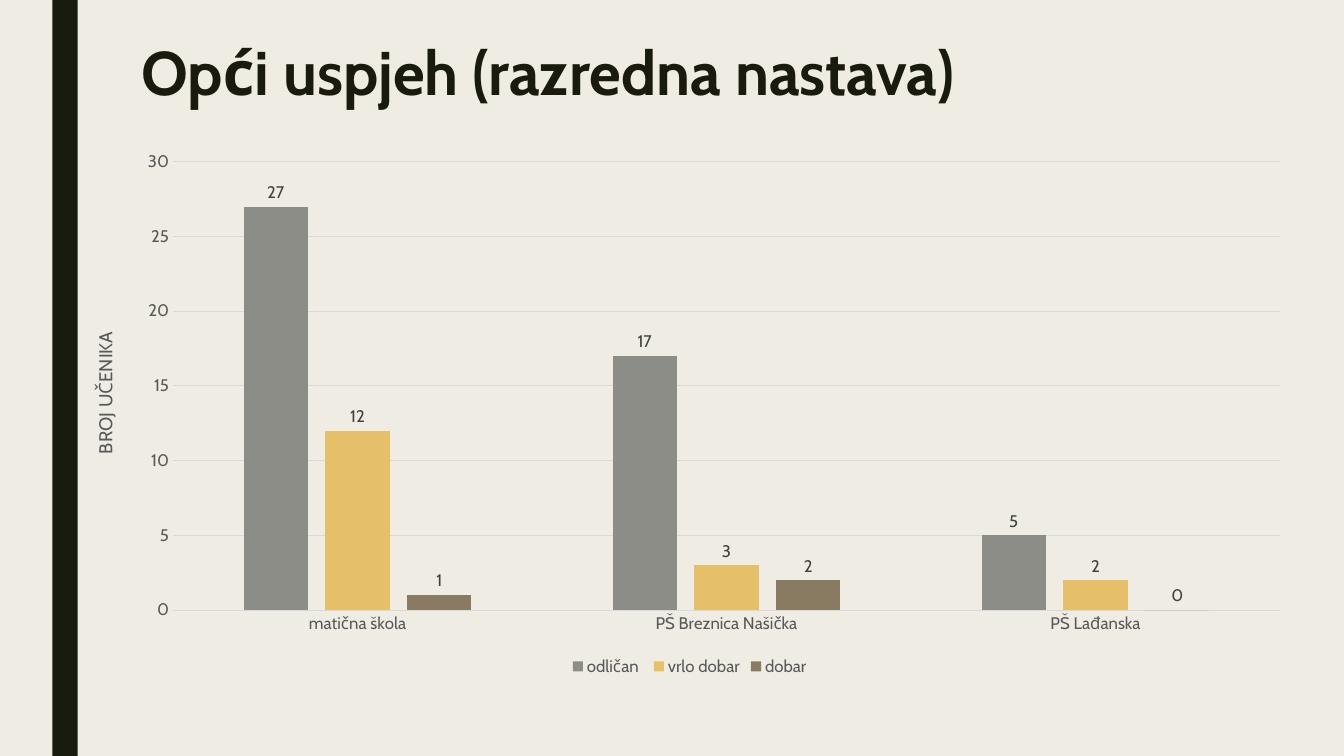
from lxml.etree import SubElement
from pptx import Presentation
from pptx.chart.data import CategoryChartData
from pptx.dml.color import RGBColor
from pptx.enum.chart import XL_CHART_TYPE, XL_LABEL_POSITION, XL_LEGEND_POSITION, XL_TICK_MARK
from pptx.enum.shapes import MSO_SHAPE
from pptx.enum.text import MSO_ANCHOR, MSO_AUTO_SIZE, PP_ALIGN
from pptx.oxml.ns import qn
from pptx.util import Inches, Pt


def paint(target, color):
    target.solid()
    target.fore_color.rgb = RGBColor.from_string(color)


class Deck:
    face = "Cabin"
    dark = "191B0E"
    paper = "EFEDE3"
    gray = "595959"
    rule = "D9D9D9"

    def __init__(self):
        self.show = Presentation()
        self.show.slide_width = Inches(13.33)
        self.show.slide_height = Inches(7.5)
        self.slide = self.show.slides.add_slide(self.show.slide_layouts[5])
        paint(self.slide.background.fill, self.paper)

    def style(self, font, size, color, bold=False):
        font.name = self.face
        font.size = Pt(size)
        font.bold = bold
        paint(font.fill, color)

    def line(self, format):
        paint(format.line.fill, self.rule)
        format.line.width = Pt(0.75)

    def bar(self, *box):
        shape = self.slide.shapes.add_shape(MSO_SHAPE.RECTANGLE, *map(Inches, box))
        shape.shadow.inherit = False
        paint(shape.fill, self.dark)
        shape.line.fill.background()

    def title(self, text, *box):
        shape = self.slide.shapes.title
        shape.left, shape.top, shape.width, shape.height = map(Inches, box)
        frame = shape.text_frame
        frame.text = text
        frame.word_wrap = True
        frame.auto_size = MSO_AUTO_SIZE.NONE
        frame.vertical_anchor = MSO_ANCHOR.TOP
        para = frame.paragraphs[0]
        para.alignment = PP_ALIGN.LEFT
        para.line_spacing = 0.89
        self.style(para.runs[0].font, 44, self.dark, True)

    def chart(self, groups, series, label, plot, *box):
        data = CategoryChartData()
        data.categories = groups
        for name, color, values in series:
            data.add_series(name, values)
        chart = self.slide.shapes.add_chart(
            XL_CHART_TYPE.COLUMN_CLUSTERED, *map(Inches, box), data).chart
        self.style(chart.font, 10, "000000")
        chart.has_title = False
        chart.has_legend = True
        chart.legend.position = XL_LEGEND_POSITION.BOTTOM
        chart.legend.include_in_layout = False
        self.style(chart.legend.font, 12, self.gray)
        self.axes(chart, label)
        bars = chart.plots[0]
        bars.vary_by_categories = False
        bars.gap_width = 219
        bars.overlap = -27
        for item, (name, color, values) in zip(bars.series, series):
            paint(item.format.fill, color)
            item.invert_if_negative = False
            labels = item.data_labels
            labels.show_value = True
            labels.position = XL_LABEL_POSITION.OUTSIDE_END
            self.style(labels.font, 12, "404040")
        self.place(chart, plot)

    def axes(self, chart, label):
        for axis in (chart.category_axis, chart.value_axis):
            axis.major_tick_mark = XL_TICK_MARK.NONE
            axis.minor_tick_mark = XL_TICK_MARK.NONE
            self.style(axis.tick_labels.font, 12, self.gray)
        self.line(chart.category_axis.format)
        axis = chart.value_axis
        axis.format.line.fill.background()
        axis.minimum_scale, axis.maximum_scale, axis.major_unit = 0, 30, 5
        axis.has_major_gridlines = True
        self.line(axis.major_gridlines.format)
        frame = axis.axis_title.text_frame
        frame.text = label
        self.style(frame.paragraphs[0].runs[0].font, 13.3, self.gray)
        body = frame._txBody.find(qn("a:bodyPr"))
        body.set("rot", "-5400000")
        body.set("vert", "horz")

    def place(self, chart, plot):
        area = chart._chartSpace.find(".//" + qn("c:plotArea"))
        for old in area.findall(qn("c:layout")):
            area.remove(old)
        layout = SubElement(area, qn("c:layout"))
        area.insert(0, layout)
        manual = SubElement(layout, qn("c:manualLayout"))
        marks = [("layoutTarget", "inner"), ("xMode", "edge"), ("yMode", "edge")]
        for tag, value in marks + list(zip("xywh", plot)):
            SubElement(manual, qn("c:" + tag)).set("val", str(value))


def main():
    deck = Deck()
    deck.bar(0.52, 0, 0.25, 7.5)
    deck.title("Opći uspjeh (razredna nastava)", 1.3, 0.38, 10.5, 1.62)
    groups = ["matična škola", "PŠ Breznica Našička", "PŠ Lađanska"]
    series = [
        ("odličan ", "8C8D86", (27, 17, 5)),
        ("vrlo dobar", "E6C069", (12, 3, 2)),
        ("dobar", "897B61", (1, 2, 0)),
    ]
    plot = (0.08, 0.04, 0.9, 0.83)
    deck.chart(groups, series, "BROJ UČENIKA", plot, 0.74, 1.39, 12.2, 5.36)
    deck.show.save("out.pptx")


if __name__ == "__main__":
    main()
